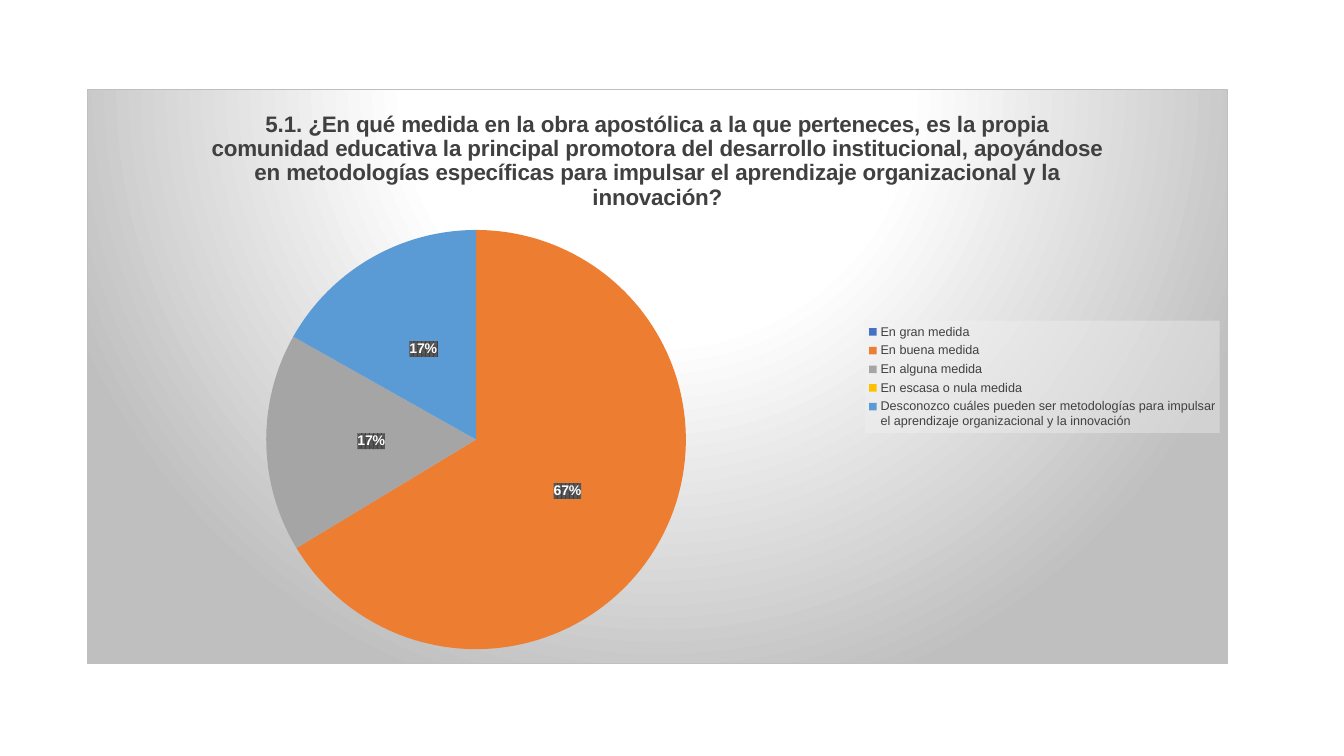
from dataclasses import dataclass

from pptx import Presentation
from pptx.chart.data import CategoryChartData
from pptx.dml.color import RGBColor
from pptx.enum.chart import XL_CHART_TYPE, XL_LABEL_POSITION, XL_LEGEND_POSITION
from pptx.oxml import parse_xml
from pptx.oxml.ns import nsdecls
from pptx.util import Inches, Pt


@dataclass(frozen=True)
class Theme:
    font: str = "Arial"
    title_size: float = 16
    label_size: float = 10
    legend_size: float = 9
    ink: str = "404040"
    label_ink: str = "FFFFFF"
    label_shade: str = "595959"
    light: str = "FFFFFF"
    edge: str = "BFBFBF"
    legend_fill: str = "F2F2F2"


theme = Theme()


def style_font(font, size, color, bold):
    font.name = theme.font
    font.size = Pt(size)
    font.bold = bold
    font.color.rgb = RGBColor.from_string(color)


def chart_xml(tag, content):
    return parse_xml(f"<c:{tag} {nsdecls('c', 'a')}>{content}</c:{tag}>")


answers = [
    ("En gran medida", 0, "4472C4"),
    ("En buena medida", 67, "ED7D31"),
    ("En alguna medida", 17, "A5A5A5"),
    ("En escasa o nula medida", 0, "FFC000"),
    ("Desconozco cuáles pueden ser metodologías para impulsar el aprendizaje "
     "organizacional y la innovación", 17, "5B9BD5"),
]
question = (
    "5.1. ¿En qué medida en la obra apostólica a la que perteneces, es la propia "
    "comunidad educativa la principal promotora del desarrollo institucional, "
    "apoyándose en metodologías específicas para impulsar el aprendizaje "
    "organizacional y la innovación?"
)

deck = Presentation()
deck.slide_width = Inches(13.33)
deck.slide_height = Inches(7.5)
slide = deck.slides.add_slide(deck.slide_layouts[6])

survey = CategoryChartData()
survey.categories = [answer for answer, share, color in answers]
survey.add_series("Series 1", [share for answer, share, color in answers])
pie = slide.shapes.add_chart(
    XL_CHART_TYPE.PIE, Inches(0.86), Inches(0.88), Inches(11.32), Inches(5.71), survey
).chart
style_font(pie.font, theme.label_size, "000000", False)

pie.has_title = True
heading = pie.chart_title.text_frame.paragraphs[0].add_run()
heading.text = question
style_font(heading.font, theme.title_size, theme.ink, True)

plot = pie.plots[0]
plot.vary_by_categories = True
shares = plot.series[0]
for index, (answer, share, color) in enumerate(answers):
    slice_fill = shares.points[index].format.fill
    slice_fill.solid()
    slice_fill.fore_color.rgb = RGBColor.from_string(color)

labels = shares.data_labels
labels.show_value = True
labels.number_format = '0"%"'
labels.number_format_is_linked = False
labels.position = XL_LABEL_POSITION.CENTER
style_font(labels.font, theme.label_size, theme.label_ink, True)

pie.has_legend = True
legend = pie.legend
legend.position = XL_LEGEND_POSITION.RIGHT
legend.include_in_layout = False
style_font(legend.font, theme.legend_size, theme.ink, False)

space = pie.element
label_group = space.xpath(".//c:ser/c:dLbls")[0]
empty_answers = [i for i, (answer, share, color) in enumerate(answers) if share == 0]
for place, index in enumerate(empty_answers):
    label_group.insert(
        place, chart_xml("dLbl", f'<c:idx val="{index}"/><c:delete val="1"/>')
    )

label_fill = (
    f'<a:pattFill prst="pct75"><a:fgClr><a:srgbClr val="{theme.ink}"/></a:fgClr>'
    f'<a:bgClr><a:srgbClr val="{theme.label_shade}"/></a:bgClr></a:pattFill>'
)
legend_fill = (
    f'<a:solidFill><a:srgbClr val="{theme.legend_fill}"><a:alpha val="39000"/>'
    "</a:srgbClr></a:solidFill>"
)
stops = "".join(
    f'<a:gs pos="{position * 1000}"><a:srgbClr val="{color}"/></a:gs>'
    for position, color in [(0, theme.light), (39, theme.light), (100, theme.edge)]
)
background = (
    f'<a:gradFill><a:gsLst>{stops}</a:gsLst><a:path path="circle">'
    '<a:fillToRect l="50000" t="-80000" r="50000" b="180000"/></a:path></a:gradFill>'
    f'<a:ln w="9525"><a:solidFill><a:srgbClr val="{theme.edge}"/></a:solidFill></a:ln>'
)
for location, look in [
    (".//c:ser/c:dLbls/c:txPr", label_fill),
    (".//c:legend/c:txPr", legend_fill),
    ("./c:txPr", background),
]:
    space.xpath(location)[0].addprevious(chart_xml("spPr", look))

for old_layout in space.xpath(".//c:plotArea/c:layout | .//c:legend/c:layout"):
    old_layout.getparent().remove(old_layout)
for location, target, frame in [
    (".//c:pieChart", '<c:layoutTarget val="inner"/>', (0.157, 0.245, 0.368, 0.73)),
    (".//c:legend/c:overlay", "", (0.682, 0.403, 0.311, 0.195)),
]:
    modes = '<c:xMode val="edge"/><c:yMode val="edge"/>'
    sides = "".join(f'<c:{side} val="{size}"/>' for side, size in zip("xywh", frame))
    layout = f"<c:manualLayout>{target}{modes}{sides}</c:manualLayout>"
    space.xpath(location)[0].addprevious(chart_xml("layout", layout))

deck.save("out.pptx")
